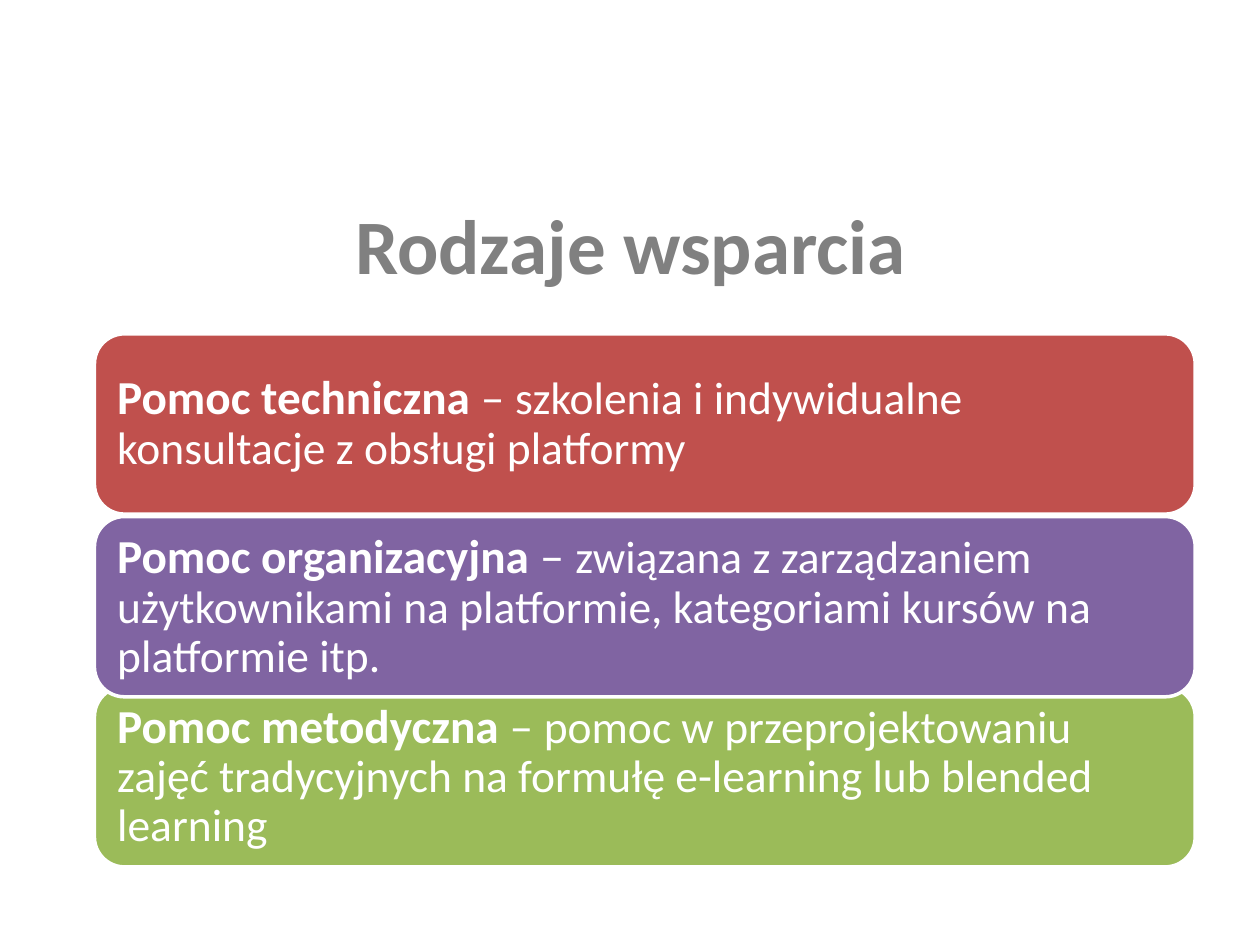
from pptx import Presentation
from pptx.dml.color import RGBColor
from pptx.enum.shapes import MSO_SHAPE as Shape
from pptx.enum.text import MSO_ANCHOR as Anchor, PP_ALIGN as Align
from pptx.util import Pt

FONT = "Calibri"
WHITE = RGBColor(0xFF, 0xFF, 0xFF)
GREY = RGBColor(0x80, 0x80, 0x80)
RED = RGBColor(0xC0, 0x50, 0x4D)
GREEN = RGBColor(0x9B, 0xBB, 0x59)
PURPLE = RGBColor(0x80, 0x64, 0xA2)

# Top, fill, heading, dash size and description, from back to front
SUPPORT_TYPES = [
    (190.8, RED, "Pomoc techniczna ", 27,
     "szkolenia i indywidualne konsultacje z obsługi platformy"),
    (392.4, GREEN, "Pomoc metodyczna ", 27,
     "pomoc w przeprojektowaniu zajęć tradycyjnych na formułę "
     "e-learning lub blended learning"),
    (295.2, PURPLE, "Pomoc organizacyjna ", 28,
     "związana z zarządzaniem użytkownikami na platformie, "
     "kategoriami kursów na platformie itp."),
]


def add_title(page, left, top, width, height):
    box = page.shapes.add_textbox(Pt(left), Pt(top), Pt(width), Pt(height))
    frame = box.text_frame
    frame.word_wrap = True
    frame.vertical_anchor = Anchor.MIDDLE
    para = frame.paragraphs[0]
    para.text = "Rodzaje wsparcia"
    para.alignment = Align.CENTER
    para.font.name = FONT
    para.font.size = Pt(44)
    para.font.bold = True
    para.font.color.rgb = GREY


def add_support_card(page, left, top, width, height, fill, spans):
    card = page.shapes.add_shape(
        Shape.ROUNDED_RECTANGLE, Pt(left), Pt(top), Pt(width), Pt(height))
    card.shadow.inherit = False
    card.fill.solid()
    card.fill.fore_color.rgb = fill
    card.line.color.rgb = WHITE
    card.line.width = Pt(2)

    frame = card.text_frame
    frame.word_wrap = True
    frame.vertical_anchor = Anchor.MIDDLE
    frame.margin_left = frame.margin_right = Pt(8)
    frame.margin_top = frame.margin_bottom = Pt(8)
    para = frame.paragraphs[0]
    para.alignment = Align.LEFT
    para.line_spacing = 0.9
    para.font.name = FONT
    para.font.color.rgb = WHITE
    for text, size, bold in spans:
        span = para.add_run()
        span.text = text
        span.font.size = Pt(size)
        span.font.bold = bold


def main():
    deck = Presentation()
    deck.slide_width, deck.slide_height = Pt(720), Pt(540)
    page = deck.slides.add_slide(deck.slide_layouts[6])

    # Title
    add_title(page, 36.5, 94.5, 648, 90)

    # Support cards
    for top, fill, heading, dash_size, description in SUPPORT_TYPES:
        spans = [(heading, 27, True), ("– ", dash_size, False),
                 (description, 26, False)]
        add_support_card(page, 54, top, 629, 103, fill, spans)

    deck.save("out.pptx")


if __name__ == "__main__":
    main()
